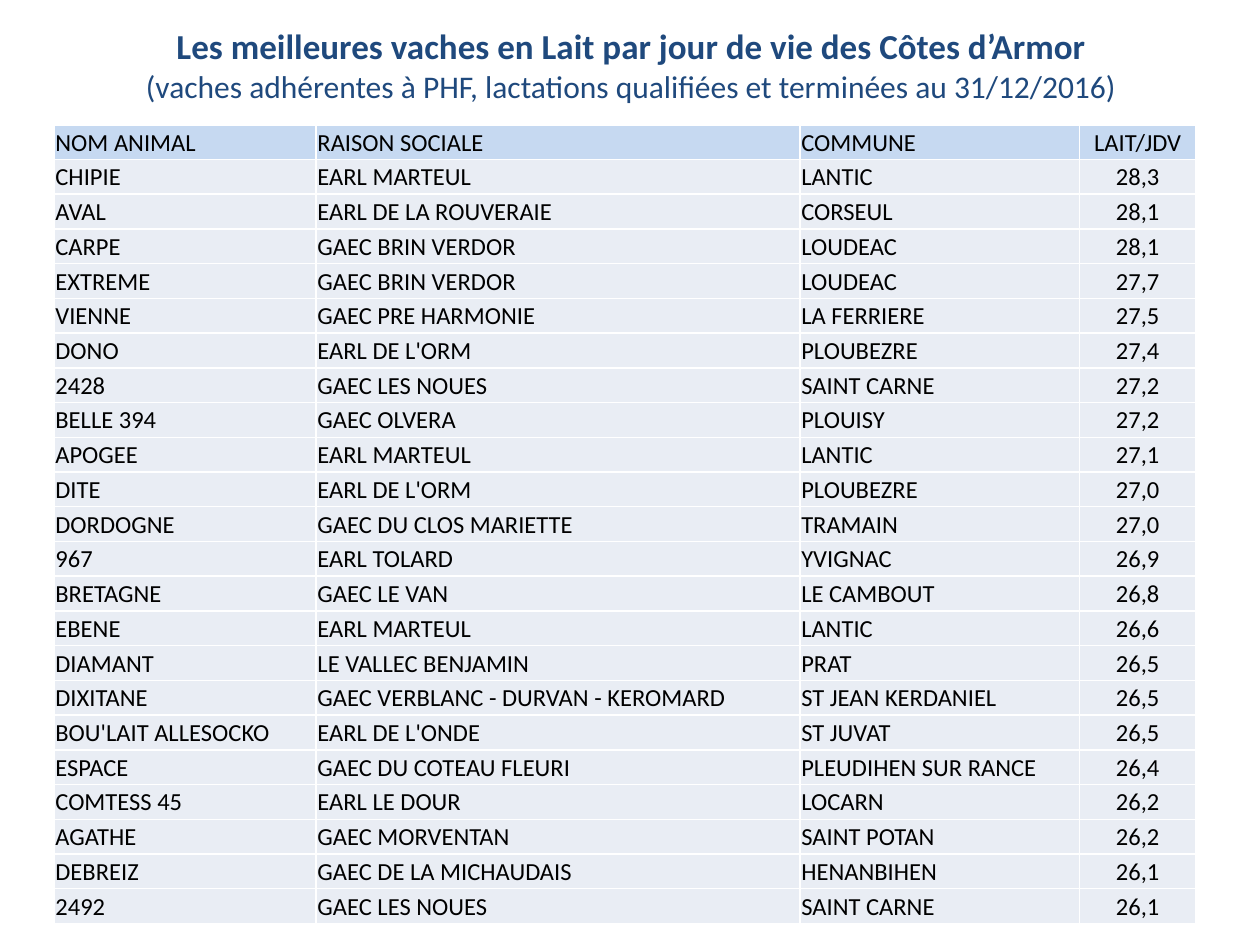
"""Build a slide ranking the best cows of Côtes d’Armor by milk per day of life."""
from lxml import etree
from pptx import Presentation
from pptx.dml.color import RGBColor
from pptx.enum.text import MSO_ANCHOR, PP_ALIGN
from pptx.oxml.ns import qn
from pptx.util import Inches, Pt

MIDDLE = MSO_ANCHOR.MIDDLE
LEFT, CENTER = PP_ALIGN.LEFT, PP_ALIGN.CENTER

HEADING = [
    ("Les meilleures vaches en Lait par jour de vie des Côtes d’Armor", "title"),
    ("(vaches adhérentes à PHF, lactations qualifiées et terminées au 31/12/2016)", "subtitle"),
]
COLUMNS = [
    ("NOM ANIMAL", 2.08, LEFT),
    ("RAISON SOCIALE", 3.84, LEFT),
    ("COMMUNE", 2.22, LEFT),
    ("LAIT/JDV", 0.92, CENTER),
]
COWS = [
    ("CHIPIE", "EARL MARTEUL", "LANTIC", "28,3"),
    ("AVAL", "EARL DE LA ROUVERAIE", "CORSEUL", "28,1"),
    ("CARPE", "GAEC BRIN VERDOR", "LOUDEAC", "28,1"),
    ("EXTREME", "GAEC BRIN VERDOR", "LOUDEAC", "27,7"),
    ("VIENNE", "GAEC PRE HARMONIE", "LA FERRIERE", "27,5"),
    ("DONO", "EARL DE L'ORM", "PLOUBEZRE", "27,4"),
    ("2428", "GAEC LES NOUES", "SAINT CARNE", "27,2"),
    ("BELLE 394", "GAEC OLVERA", "PLOUISY", "27,2"),
    ("APOGEE", "EARL MARTEUL", "LANTIC", "27,1"),
    ("DITE", "EARL DE L'ORM", "PLOUBEZRE", "27,0"),
    ("DORDOGNE", "GAEC DU CLOS MARIETTE", "TRAMAIN", "27,0"),
    ("967", "EARL TOLARD", "YVIGNAC", "26,9"),
    ("BRETAGNE", "GAEC LE VAN", "LE CAMBOUT", "26,8"),
    ("EBENE", "EARL MARTEUL", "LANTIC", "26,6"),
    ("DIAMANT", "LE VALLEC BENJAMIN", "PRAT", "26,5"),
    ("DIXITANE", "GAEC VERBLANC - DURVAN - KEROMARD", "ST JEAN KERDANIEL", "26,5"),
    ("BOU'LAIT ALLESOCKO", "EARL DE L'ONDE", "ST JUVAT", "26,5"),
    ("ESPACE", "GAEC DU COTEAU FLEURI", "PLEUDIHEN SUR RANCE", "26,4"),
    ("COMTESS 45", "EARL LE DOUR", "LOCARN", "26,2"),
    ("AGATHE", "GAEC MORVENTAN", "SAINT POTAN", "26,2"),
    ("DEBREIZ", "GAEC DE LA MICHAUDAIS", "HENANBIHEN", "26,1"),
    ("2492", "GAEC LES NOUES", "SAINT CARNE", "26,1"),
]

THEME = {
    "title": {"name": "Calibri", "size": Pt(20), "bold": True, "color": "1F497D"},
    "subtitle": {"name": "Calibri", "size": Pt(18), "bold": False, "color": "1F497D"},
    "cell": {"name": "Calibri", "size": Pt(14), "bold": False, "color": "000000"},
    "header_fill": "C6D9F1",
    "body_fill": "E9EDF4",
    "border": "FFFFFF",
    "border_width": Pt(1),
}
CELL_FORMAT = {
    "vertical_anchor": MIDDLE,
    "margin_left": Inches(0.01),
    "margin_top": Inches(0.01),
    "margin_right": Inches(0.01),
    "margin_bottom": 0,
}
TABLE_HEIGHT = 6.34


def apply_format(target, values):
    for attribute, value in values.items():
        if attribute == "color":
            target.color.rgb = RGBColor.from_string(value)
        else:
            setattr(target, attribute, value)


def add_run(paragraph, wording, style):
    run = paragraph.add_run()
    run.text = wording
    apply_format(run.font, THEME[style])


def add_borders(cell):
    properties = cell._tc.get_or_add_tcPr()
    for side in ("a:lnL", "a:lnR", "a:lnT", "a:lnB"):
        border = etree.SubElement(properties, qn(side), w=str(THEME["border_width"]))
        solid = etree.SubElement(border, qn("a:solidFill"))
        etree.SubElement(solid, qn("a:srgbClr"), val=THEME["border"])


def add_heading(slide):
    heading = slide.shapes.add_textbox(Inches(0.51), Inches(0.13), Inches(9), Inches(0.77))
    apply_format(heading.text_frame, {"word_wrap": True, "vertical_anchor": MIDDLE})
    paragraph = heading.text_frame.paragraphs[0]
    paragraph.alignment = CENTER
    for index, (wording, style) in enumerate(HEADING):
        if index:
            paragraph.add_line_break()
        add_run(paragraph, wording, style)


def add_ranking(slide):
    labels, widths, alignments = zip(*COLUMNS)
    rows = [labels] + COWS
    ranking = slide.shapes.add_table(
        len(rows), len(labels), Inches(0.43), Inches(0.99),
        Inches(sum(widths)), Inches(TABLE_HEIGHT)).table
    apply_format(ranking, {"first_row": False, "horz_banding": False})
    for column, width in zip(ranking.columns, widths):
        column.width = Inches(width)
    for row_index, values in enumerate(rows):
        ranking.rows[row_index].height = Inches(TABLE_HEIGHT / len(rows))
        fill = THEME["body_fill" if row_index else "header_fill"]
        for column_index, (value, alignment) in enumerate(zip(values, alignments)):
            cell = ranking.cell(row_index, column_index)
            apply_format(cell, CELL_FORMAT)
            add_borders(cell)
            cell.fill.solid()
            cell.fill.fore_color.rgb = RGBColor.from_string(fill)
            paragraph = cell.text_frame.paragraphs[0]
            paragraph.alignment = alignment
            add_run(paragraph, value, "cell")


def main():
    deck = Presentation()
    apply_format(deck, {"slide_width": Inches(10), "slide_height": Inches(7.5)})
    slide = deck.slides.add_slide(deck.slide_layouts[6])
    add_heading(slide)
    add_ranking(slide)
    deck.save("out.pptx")


if __name__ == "__main__":
    main()
